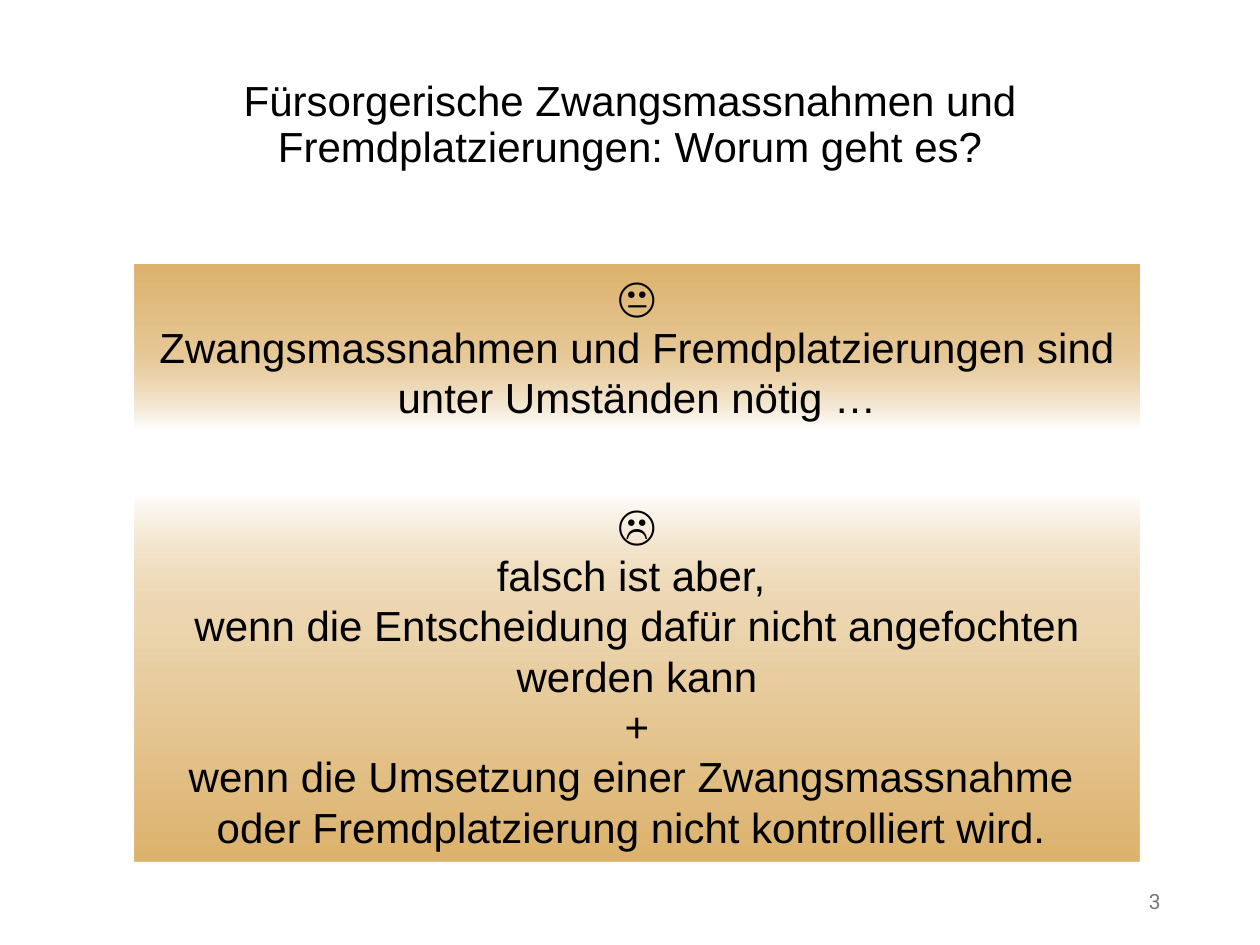
from dataclasses import dataclass

from lxml import etree
from pptx import Presentation
from pptx.dml.color import RGBColor
from pptx.enum.shapes import MSO_SHAPE
from pptx.enum.text import MSO_ANCHOR, MSO_AUTO_SIZE, PP_ALIGN
from pptx.oxml.ns import qn
from pptx.util import Inches, Pt

RECTANGLE = MSO_SHAPE.RECTANGLE
TOP, MIDDLE = MSO_ANCHOR.TOP, MSO_ANCHOR.MIDDLE
CENTER, RIGHT = PP_ALIGN.CENTER, PP_ALIGN.RIGHT
GROW = MSO_AUTO_SIZE.SHAPE_TO_FIT_TEXT


@dataclass(frozen=True)
class Theme:
    ink: str = "000000"
    muted: str = "797979"
    gold: str = "DCB26C"
    white: str = "FFFFFF"
    font: str = "Arial"
    number_font: str = "Roboto"
    body_size: int = 24
    number_size: int = 12


THEME = Theme()


def write(shape, lines, anchor, align, font, size, color):
    frame = shape.text_frame
    frame.word_wrap = True
    frame.vertical_anchor = anchor
    frame.text = "\n".join(lines)
    for paragraph in frame.paragraphs:
        paragraph.alignment = align
        for run in paragraph.runs:
            run.font.name = font
            run.font.size = Pt(size)
            run.font.color.rgb = RGBColor.from_string(color)


def fade_down(shape, stops):
    shape.fill.gradient()
    shape.fill.gradient_angle = 270
    stop_list = shape.fill._xPr.find(qn("a:gradFill")).find(qn("a:gsLst"))
    for old_stop in list(stop_list):
        stop_list.remove(old_stop)
    for position, color, opacity in stops:
        stop = etree.SubElement(stop_list, qn("a:gs"), pos=str(position * 1000))
        tint = etree.SubElement(stop, qn("a:srgbClr"), val=color)
        if opacity < 100:
            etree.SubElement(tint, qn("a:alpha"), val=str(opacity * 1000))


presentation = Presentation()
presentation.slide_width = Inches(10)
presentation.slide_height = Inches(7.5)
slide = presentation.slides.add_slide(presentation.slide_layouts[6])

statements = [
    (2.1, 1.31,
     [(0, THEME.white, 100), (0, THEME.gold, 100),
      (55, THEME.gold, 70), (100, THEME.white, 100)],
     ["😐",
      "Zwangsmassnahmen und Fremdplatzierungen sind",
      "unter Umständen nötig …"]),
    (3.91, 2.93,
     [(0, THEME.white, 100), (36, THEME.gold, 54), (100, THEME.gold, 100)],
     ["☹",
      "falsch ist aber, ",
      "wenn die Entscheidung dafür nicht angefochten werden kann",
      "+",
      "wenn die Umsetzung einer Zwangsmassnahme ",
      "oder Fremdplatzierung nicht kontrolliert wird. "]),
]
for top, height, stops, lines in statements:
    statement = slide.shapes.add_shape(
        RECTANGLE, Inches(1.07), Inches(top), Inches(7.97), Inches(height))
    statement.shadow.inherit = False
    statement.line.fill.background()
    fade_down(statement, stops)
    write(statement, lines, TOP, CENTER, THEME.font, THEME.body_size, THEME.ink)
    statement.text_frame.auto_size = GROW

page_number = slide.shapes.add_textbox(
    Inches(7.06), Inches(6.95), Inches(2.25), Inches(0.4))
write(page_number, ["3"], MIDDLE, RIGHT,
      THEME.number_font, THEME.number_size, THEME.muted)

title = slide.shapes.add_textbox(
    Inches(0.69), Inches(0.4), Inches(8.62), Inches(1.2))
write(title,
      ["Fürsorgerische Zwangsmassnahmen und Fremdplatzierungen: Worum geht es?"],
      MIDDLE, CENTER, THEME.font, THEME.body_size, THEME.ink)
title.text_frame.paragraphs[0].line_spacing = 0.9

presentation.save("out.pptx")
